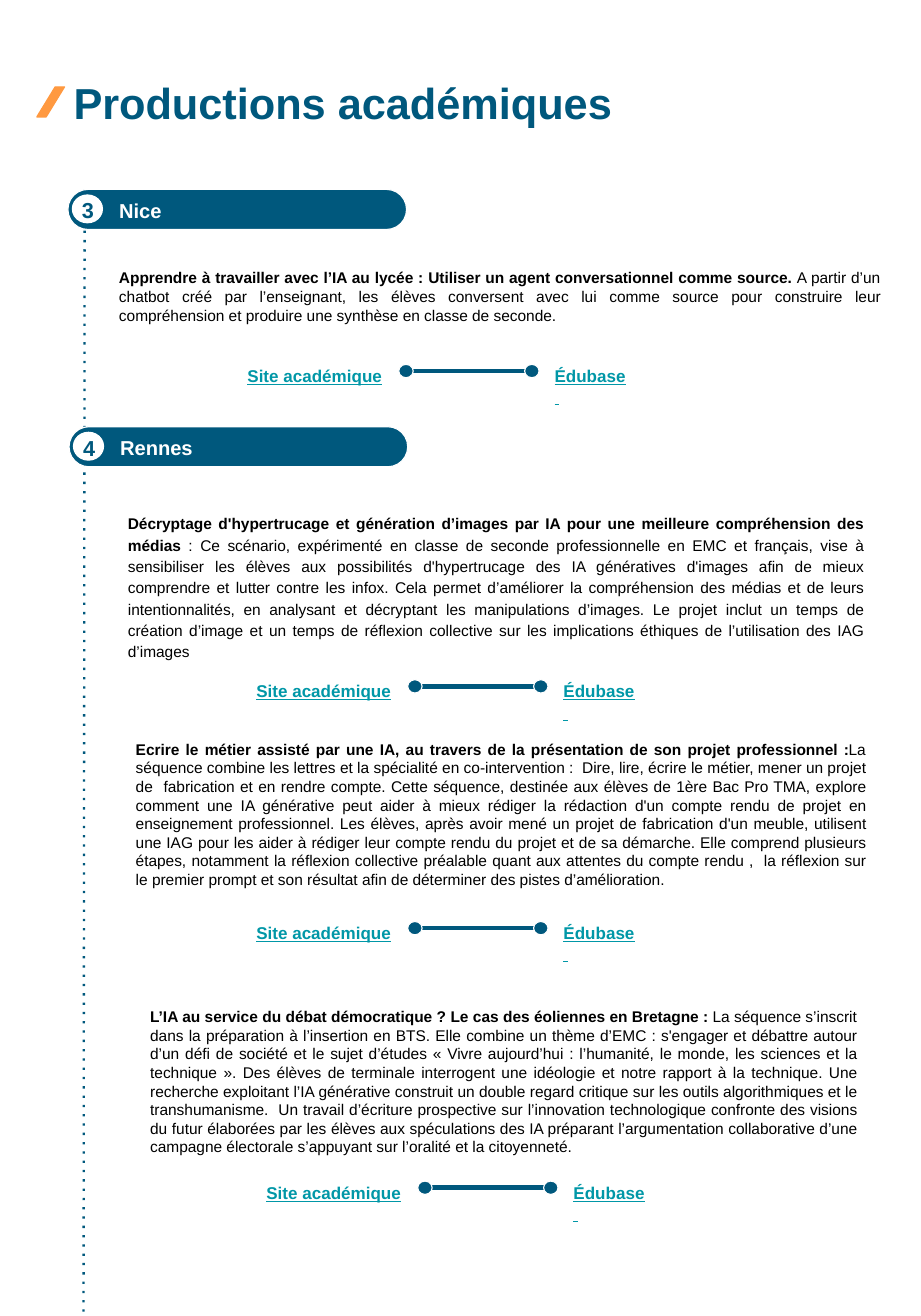
from lxml import etree
from pptx import Presentation
from pptx import util as u
from pptx.dml import color
from pptx.enum import dml, shapes, text
from pptx.oxml import ns

NAVY, TEAL, WHITE, BLACK, AMBER = "00587D", "0097A7", "FFFFFF", "000000", "FF9940"
LEFT, MID, RIGHT, FULL = (text.PP_ALIGN.LEFT, text.PP_ALIGN.CENTER,
                          text.PP_ALIGN.RIGHT, text.PP_ALIGN.JUSTIFY)
FORM = shapes.MSO_SHAPE


def rgb(code):
    return color.RGBColor.from_string(code)


def spots(*nums):
    return [u.Inches(n) for n in nums]


def shape(slide, kind, box, fill, edge=WHITE):
    item = slide.shapes.add_shape(kind, *spots(*box))
    item.shadow.inherit = False
    item.fill.solid()
    item.fill.fore_color.rgb = rgb(fill)
    item.line.color.rgb = rgb(edge)
    item.line.width = u.Pt(0.75)
    return item


def rule(slide, start, end, width):
    line = slide.shapes.add_connector(shapes.MSO_CONNECTOR.STRAIGHT, *spots(*start, *end))
    line.line.color.rgb = rgb(NAVY)
    line.line.width = u.Pt(width)
    etree.SubElement(line._element.spPr, ns.qn("a:effectLst"))
    return line


def frame(item, pad=0.1):
    body = item.text_frame
    body.word_wrap = True
    body.auto_size = text.MSO_AUTO_SIZE.NONE
    body.vertical_anchor = text.MSO_ANCHOR.TOP
    body.margin_left = body.margin_right = u.Inches(0.1)
    body.margin_top = body.margin_bottom = u.Inches(pad)
    return body


def add_run(para, words, size, tint, bold=True, under=False):
    run = para.add_run()
    run.text = words
    font = run.font
    font.name, font.size, font.bold = "Arial", u.Pt(size), bold
    font.color.rgb = rgb(tint)
    if under:
        font.underline = True


def label(slide, box, words, size, tint, align=LEFT, pad=0.1, under=False):
    body = frame(slide.shapes.add_textbox(*spots(*box)), pad)
    for i, part in enumerate(words):
        para = body.add_paragraph() if i else body.paragraphs[0]
        para.alignment = align
        add_run(para, part, size, tint, under=under)


def heading(slide, x, y):
    title = slide.shapes.title
    title.left, title.top, title.width, title.height = spots(x + 0.23, y, 7.23, 0.67)
    para = frame(title).paragraphs[0]
    para.alignment = LEFT
    add_run(para, "Productions académiques", 28, NAVY)
    mark = shape(slide, FORM.PARALLELOGRAM, (x, y + 0.2, 0.25, 0.27), AMBER, AMBER)
    mark.adjustments[0] = 0.66


def banner(slide, x, y, num, name):
    pill = shape(slide, FORM.ROUNDED_RECTANGLE, (x, y, 3.04, 0.36), NAVY)
    pill.adjustments[0] = 0.5
    label(slide, (x + 0.36, y + 0.03, 2.95, 0.32), [name], 13, WHITE, pad=0.05)
    shape(slide, FORM.OVAL, (x + 0.04, y + 0.05, 0.27, 0.25), WHITE)
    label(slide, (x - 0.03, y - 0.03, 0.42, 0.44), [num], 14, NAVY, MID)


def story(slide, box, lead, rest, space=None):
    para = frame(slide.shapes.add_textbox(*spots(*box))).paragraphs[0]
    para.alignment = FULL
    if space:
        para.line_spacing = space
    add_run(para, lead, 10, BLACK)
    add_run(para, rest, 10, BLACK, bold=False)


def links(slide, x, y):
    rule(slide, (x + 1.85, y + 0.15), (x + 3.06, y + 0.15), 3)
    label(slide, (x, y, 1.78, 0.39), ["Site académique"], 11, TEAL, RIGHT, under=True)
    label(slide, (x + 3.13, y, 1.47, 0.57), ["Édubase", " "], 11, TEAL, under=True)
    for gap in (1.83, 2.96):
        shape(slide, FORM.OVAL, (x + gap, y + 0.09, 0.13, 0.12), NAVY)


def trail(slide, start, end):
    line = rule(slide, start, end, 1.5)
    line.line.dash_style = dml.MSO_LINE.ROUND_DOT
    line._element.spPr.find(".//" + ns.qn("a:prstDash")).set("val", "dot")


STORIES = [
    ((0.97, 2.31, 7.03, 0.8),
     "Apprendre à travailler avec l’IA au lycée : Utiliser un agent conversationnel comme source. ",
     "A partir d’un chatbot créé par l’enseignant, les élèves conversent avec lui comme source "
     "pour construire leur compréhension et produire une synthèse en classe de seconde.",
     None, (1.75, 3.18)),
    ((1.05, 4.49, 6.8, 1.5),
     "Décryptage d'hypertrucage et génération d’images par IA pour une meilleure compréhension "
     "des médias",
     " : Ce scénario, expérimenté en classe de seconde professionnelle en EMC et français, vise à "
     "sensibiliser les élèves aux possibilités d'hypertrucage des IA génératives d'images afin de "
     "mieux comprendre et lutter contre les infox. Cela permet d’améliorer la compréhension des "
     "médias et de leurs intentionnalités, en analysant et décryptant les manipulations d’images. "
     "Le projet inclut un temps de création d’image et un temps de réflexion collective sur les "
     "implications éthiques de l’utilisation des IAG d’images",
     1.15, (1.83, 6.01)),
    ((1.12, 6.54, 6.75, 1.5),
     "Ecrire le métier assisté par une IA, au travers de la présentation de son projet "
     "professionnel :",
     "La séquence combine les lettres et la spécialité en co-intervention :  Dire, lire, écrire le "
     "métier, mener un projet de  fabrication et en rendre compte. Cette séquence, destinée aux "
     "élèves de 1ère Bac Pro TMA, explore comment une IA générative peut aider à mieux rédiger la "
     "rédaction d'un compte rendu de projet en enseignement professionnel. Les élèves, après avoir "
     "mené un projet de fabrication d'un meuble, utilisent une IAG pour les aider à rédiger leur "
     "compte rendu du projet et de sa démarche. Elle comprend plusieurs étapes, notamment la "
     "réflexion collective préalable quant aux attentes du compte rendu ,  la réflexion sur le "
     "premier prompt et son résultat afin de déterminer des pistes d’amélioration.",
     None, (1.83, 8.18)),
    ((1.25, 8.94, 6.54, 1.5),
     "L’IA au service du débat démocratique ? Le cas des éoliennes en Bretagne : ",
     "La séquence s’inscrit dans la préparation à l’insertion en BTS. Elle combine un thème "
     "d’EMC : s'engager et débattre autour d’un défi de société et le sujet d’études « Vivre "
     "aujourd’hui : l’humanité, le monde, les sciences et la technique ». Des élèves de terminale "
     "interrogent une idéologie et notre rapport à la technique. Une recherche exploitant l’IA "
     "générative construit un double regard critique sur les outils algorithmiques et le "
     "transhumanisme.  Un travail d’écriture prospective sur l’innovation technologique confronte "
     "des visions du futur élaborées par les élèves aux spéculations des IA préparant "
     "l’argumentation collaborative d’une campagne électorale s’appuyant sur l’oralité et la "
     "citoyenneté.",
     None, (1.92, 10.51)),
]


def main():
    deck = Presentation()
    deck.slide_width, deck.slide_height = u.Cm(21), u.Cm(30)
    slide = deck.slides.add_slide(deck.slide_layouts[5])
    trail(slide, (0.76, 1.82), (0.75, 11.81))
    heading(slide, 0.33, 0.58)
    banner(slide, 0.61, 1.7, "3", "Nice")
    banner(slide, 0.62, 3.83, "4", "Rennes")
    for box, lead, rest, space, spot in STORIES:
        story(slide, box, lead, rest, space)
        links(slide, *spot)
    deck.save("out.pptx")


if __name__ == "__main__":
    main()
